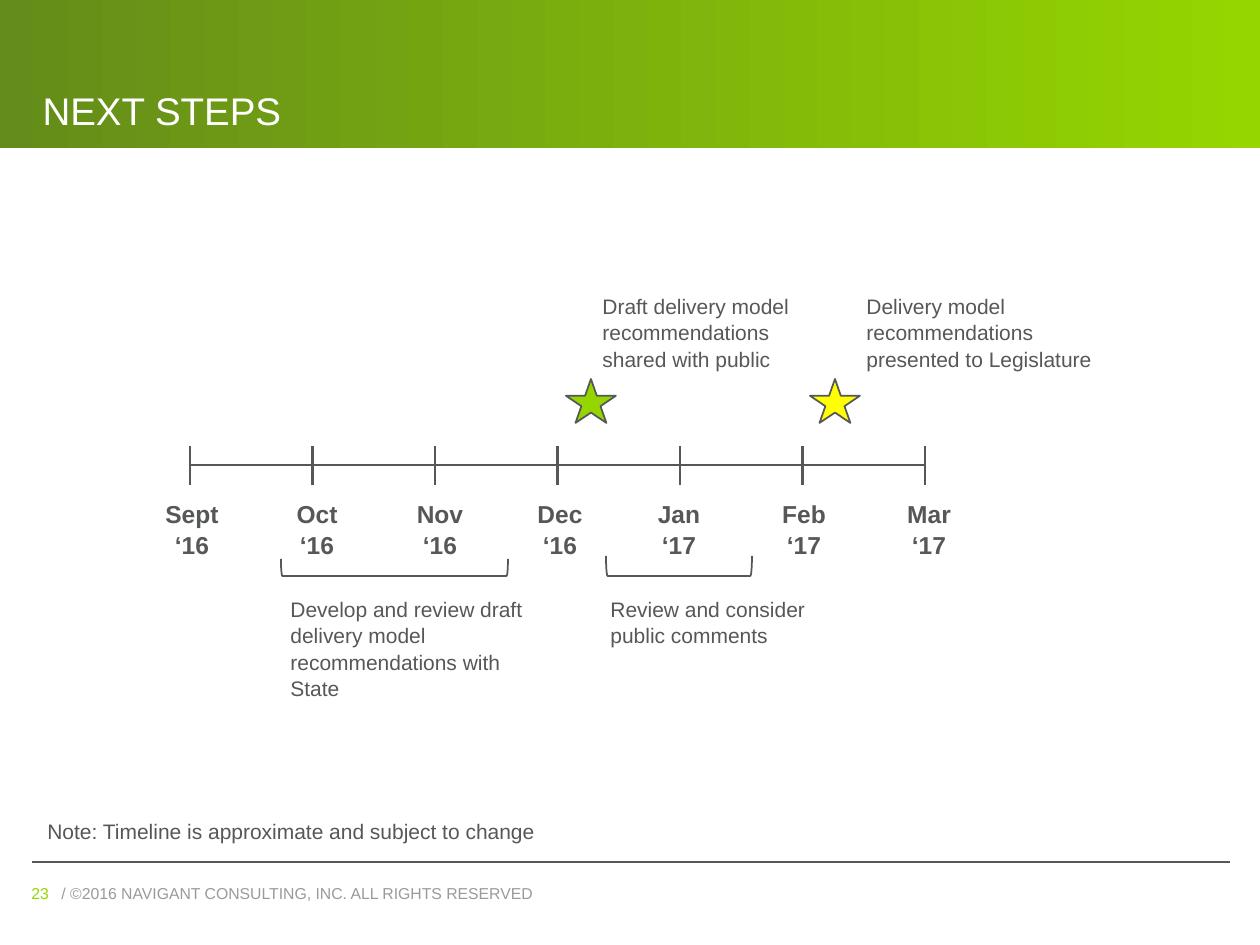
from lxml import etree
from pptx import Presentation
from pptx import util as u
from pptx.dml.color import RGBColor
from pptx.enum import shapes, text
from pptx.oxml.ns import qn

PX = 914400 / 126
LIME = RGBColor(0x95, 0xD6, 0x00)
DARK_GREEN = RGBColor(0x64, 0x8C, 0x1A)
YELLOW = RGBColor(0xFF, 0xFF, 0x00)
WHITE = RGBColor(0xFF, 0xFF, 0xFF)
SLATE = RGBColor(0x55, 0x57, 0x59)
GRAY = RGBColor(0x98, 0x9A, 0x9D)
FONT = "Arial"


def px(*lengths):
    """Turn pixel lengths into EMU."""
    return [u.Emu(round(length * PX)) for length in lengths]


def add_text(box, words, size=12, color=SLATE, bold=False, align=text.PP_ALIGN.LEFT, spacing=1.05):
    frame = box.text_frame
    frame.word_wrap = True
    frame.auto_size = text.MSO_AUTO_SIZE.NONE
    paragraph = frame.paragraphs[0]
    paragraph.alignment = align
    paragraph.line_spacing = spacing
    run = paragraph.add_run()
    run.text = words
    run.font.name = FONT
    run.font.size = u.Pt(size)
    run.font.bold = bold
    run.font.color.rgb = color


presentation = Presentation()
presentation.slide_width, presentation.slide_height = px(1260, 945)
slide = presentation.slides.add_slide(presentation.slide_layouts[5])

# Title on its green banner
title = slide.shapes.title
title.left, title.top, title.width, title.height = px(30, 0, 1200, 140)
add_text(title, "NEXT STEPS", 22, WHITE, spacing=1.0)
title.text_frame.vertical_anchor = text.MSO_ANCHOR.BOTTOM

banner = slide.shapes.add_shape(shapes.MSO_SHAPE.RECTANGLE, *px(0, 0, 1260, 148))
banner.shadow.inherit = False
banner.line.fill.background()
banner.fill.gradient()
banner.fill.gradient_angle = 0
for stop, color in zip(banner.fill.gradient_stops, (DARK_GREEN, LIME)):
    stop.color.rgb = color
title._element.addprevious(banner._element)

# Footer rule, timeline axis and month ticks
months = ["Sept ‘16", "Oct ‘16", "Nov ‘16", "Dec ‘16", "Jan ‘17", "Feb ‘17", "Mar ‘17"]
label_centers = [192, 317, 440, 560, 679, 804, 929]
axis_left, axis_right = 190, 925
month_step = (axis_right - axis_left) / (len(months) - 1)
lines = [(32, 862, 1230, 862, 0.75), (axis_left, 465, axis_right, 465, 1.5)]
for index in range(len(months)):
    tick = axis_left + index * month_step
    lines.append((tick, 446, tick, 485, 1.5))
for *ends, weight in lines:
    line = slide.shapes.add_connector(shapes.MSO_CONNECTOR.STRAIGHT, *px(*ends))
    line.line.color.rgb = SLATE
    line.line.width = u.Pt(weight)
    etree.SubElement(line._element.spPr, qn("a:effectLst"))

for month, center in zip(months, label_centers):
    label = slide.shapes.add_textbox(*px(center - 48, 491, 96, 72))
    add_text(label, month, 14, bold=True, align=text.PP_ALIGN.CENTER)

# Milestone stars
for left, color in [(566, LIME), (810, YELLOW)]:
    star = slide.shapes.add_shape(shapes.MSO_SHAPE.STAR_5_POINT, *px(left, 379, 50, 44))
    star.shadow.inherit = False
    star.fill.solid()
    star.fill.fore_color.rgb = color
    star.line.color.rgb = SLATE
    star.line.width = u.Pt(1)

# Brackets that open upwards under a span of months
for left, top, span, depth in [(281, 559, 227, 17), (606, 556, 146, 20)]:
    bracket = slide.shapes.add_shape(
        shapes.MSO_SHAPE.LEFT_BRACKET,
        *px(left + (span - depth) / 2, top - (span - depth) / 2, depth, span))
    bracket.rotation = 270
    bracket.shadow.inherit = False
    bracket.fill.background()
    bracket.line.color.rgb = SLATE
    bracket.line.width = u.Pt(1)

# Captions and note
captions = [
    (590, 286, 261, 89, "Draft delivery model recommendations shared with public"),
    (854, 286, 261, 89, "Delivery model recommendations presented to Legislature"),
    (278, 589, 261, 115, "Develop and review draft delivery model recommendations with State"),
    (598, 589, 261, 63, "Review and consider public comments"),
    (35, 811, 582, 38, "Note: Timeline is approximate and subject to change"),
]
for *place, words in captions:
    add_text(slide.shapes.add_textbox(*px(*place)), words)

# Footer
footers = [
    (19, 86, "23", LIME),
    (49, 803, "/ ©2016 NAVIGANT CONSULTING, INC. ALL RIGHTS RESERVED", GRAY),
]
for left, width, words, color in footers:
    footer = slide.shapes.add_textbox(*px(left, 878, width, 29))
    add_text(footer, words, 9, color, spacing=1.0)

presentation.save("out.pptx")
